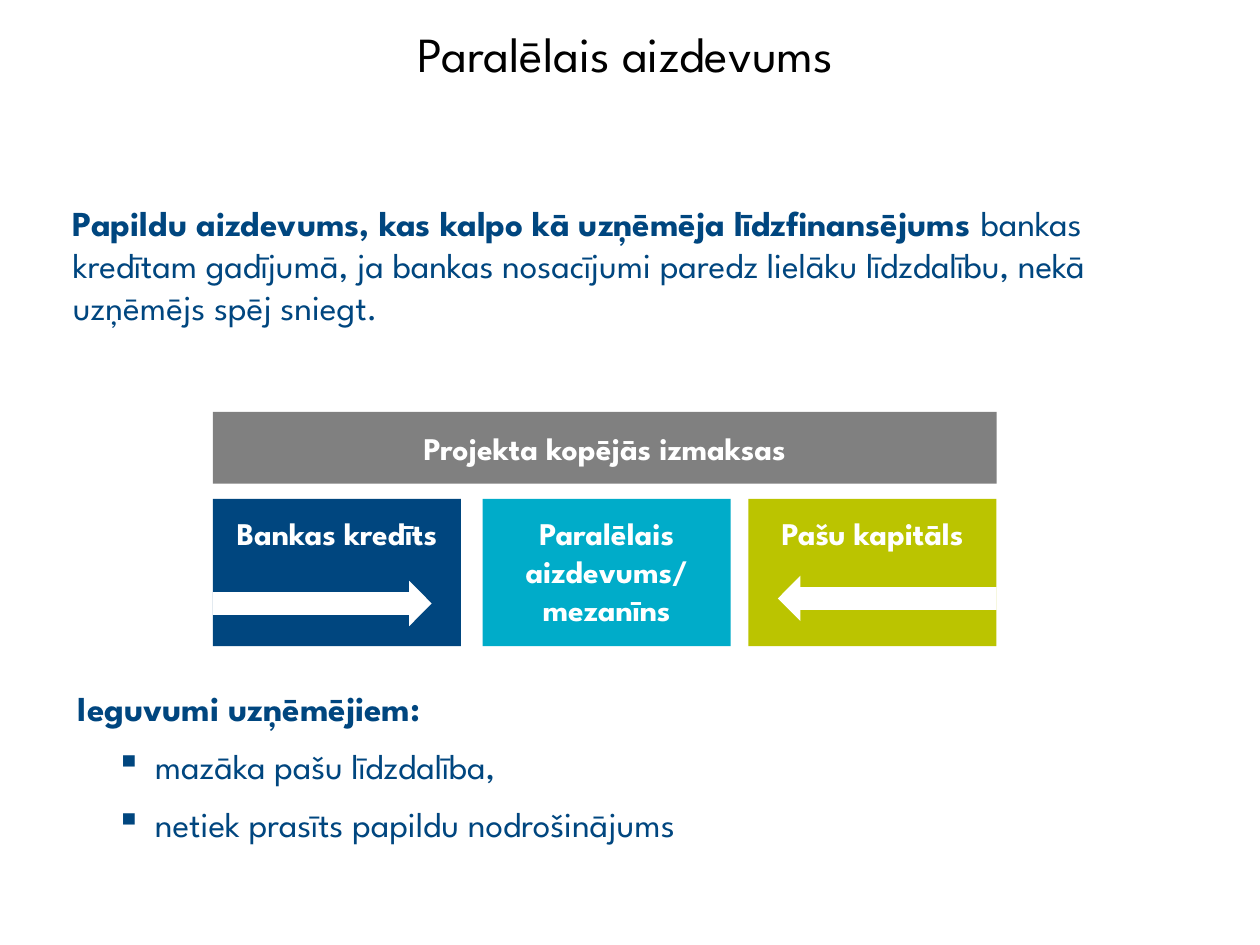
from lxml import etree
from pptx import Presentation
from pptx.dml.color import RGBColor
from pptx.enum.shapes import MSO_SHAPE as Shape
from pptx.enum.text import MSO_ANCHOR as Anchor, MSO_AUTO_SIZE as AutoSize, PP_ALIGN as Align
from pptx.oxml.ns import qn
from pptx.util import Pt

FONT = "League Spartan"
COLORS = {
    "black": "000000",
    "white": "FFFFFF",
    "navy": "00467F",
    "cyan": "00ACC9",
    "lime": "BBC400",
    "gray": "808080",
}
DIAGRAM_LEFT, DIAGRAM_WIDTH = 121.7, 447.8
PART_TOP, PART_WIDTH, PART_HEIGHT = 285.1, 141.8, 84.2


def rgb(color):
    return RGBColor.from_string(COLORS[color])


def style(font, size, color, bold=False):
    font.name = FONT
    font.size = Pt(size)
    font.bold = bold
    font.color.rgb = rgb(color)


def add_text(slide, left, top, width, height):
    box = slide.shapes.add_textbox(Pt(left), Pt(top), Pt(width), Pt(height))
    box.text_frame.word_wrap = True
    return box.text_frame


def add_filled(slide, kind, left, top, width, height, color):
    shape = slide.shapes.add_shape(kind, Pt(left), Pt(top), Pt(width), Pt(height))
    shape.shadow.inherit = False
    shape.fill.solid()
    shape.fill.fore_color.rgb = rgb(color)
    shape.line.fill.background()
    return shape


def add_block(slide, left, top, width, height, color, lines):
    frame = add_filled(slide, Shape.RECTANGLE, left, top, width, height, color).text_frame
    frame.word_wrap = True
    frame.text = "\n".join(lines)
    for line in frame.paragraphs:
        line.alignment = Align.CENTER
        style(line.font, 18, "white", True)
    return frame


def add_part(slide, left, color, lines):
    frame = add_block(slide, left, PART_TOP, PART_WIDTH, PART_HEIGHT, color, lines)
    frame.vertical_anchor = Anchor.TOP
    frame.margin_top = Pt(8.64)


def add_arrow(slide, left, top, width, rotation=0):
    arrow = add_filled(slide, Shape.RIGHT_ARROW, left, top, width, 25.9, "white")
    arrow.adjustments[1] = 0.496
    arrow.rotation = rotation


def add_title(slide, text):
    frame = add_text(slide, 31, 0, 653, 60.5)
    frame.vertical_anchor = Anchor.MIDDLE
    title = frame.paragraphs[0]
    title.text = text
    title.alignment = Align.CENTER
    style(title.font, 28, "black")


def add_definition(slide, term, explanation):
    frame = add_text(slide, 34.6, 111.6, 622.8, 79.9)
    frame.auto_size = AutoSize.SHAPE_TO_FIT_TEXT
    definition = frame.paragraphs[0]
    definition.space_after = Pt(6)
    for text, bold in ((term, True), (explanation, False)):
        run = definition.add_run()
        run.text = text
        style(run.font, 20, "navy", bold)


def add_bullet(paragraph):
    properties = paragraph._p.get_or_add_pPr()
    properties.set("marL", str(Pt(44)))
    properties.set("indent", str(Pt(-22.3)))
    etree.SubElement(properties, qn("a:buChar")).set("char", "▪")


def add_benefits(slide, heading, benefits):
    frame = add_text(slide, 37.4, 388.8, 622.8, 97.9)
    frame.auto_size = AutoSize.SHAPE_TO_FIT_TEXT
    header = frame.paragraphs[0]
    header.text = heading
    header.space_after = Pt(6)
    style(header.font, 20, "navy", True)
    for index, text in enumerate(benefits):
        benefit = frame.add_paragraph()
        benefit.text = text
        add_bullet(benefit)
        benefit.space_before = Pt(0 if index else 3)
        benefit.space_after = Pt(9)
        style(benefit.font, 20, "navy")


def add_diagram(slide):
    total = add_block(slide, DIAGRAM_LEFT, 235.4, DIAGRAM_WIDTH, 41, "gray",
                      ["Projekta kopējās izmaksas"])
    total.vertical_anchor = Anchor.MIDDLE
    right = DIAGRAM_LEFT + DIAGRAM_WIDTH
    add_part(slide, DIAGRAM_LEFT, "navy", ["Bankas kredīts"])
    add_part(slide, 275.8, "cyan", ["Paralēlais aizdevums/", "mezanīns"])
    add_part(slide, right - PART_WIDTH, "lime", ["Pašu kapitāls"])
    arrow_width = 125
    add_arrow(slide, DIAGRAM_LEFT, 331.9, arrow_width)
    add_arrow(slide, right - arrow_width, 329, arrow_width, 180)


def main():
    deck = Presentation()
    deck.slide_width, deck.slide_height = Pt(720), Pt(540)
    slide = deck.slides.add_slide(deck.slide_layouts[6])
    add_title(slide, "Paralēlais aizdevums")
    add_benefits(slide, "Ieguvumi uzņēmējiem:",
                 ["mazāka pašu līdzdalība,", "netiek prasīts papildu nodrošinājums"])
    add_diagram(slide)
    add_definition(slide, "Papildu aizdevums, kas kalpo kā uzņēmēja līdzfinansējums ",
                   "bankas kredītam gadījumā, ja bankas nosacījumi paredz lielāku "
                   "līdzdalību, nekā uzņēmējs spēj sniegt.")
    deck.save("out.pptx")


if __name__ == "__main__":
    main()
